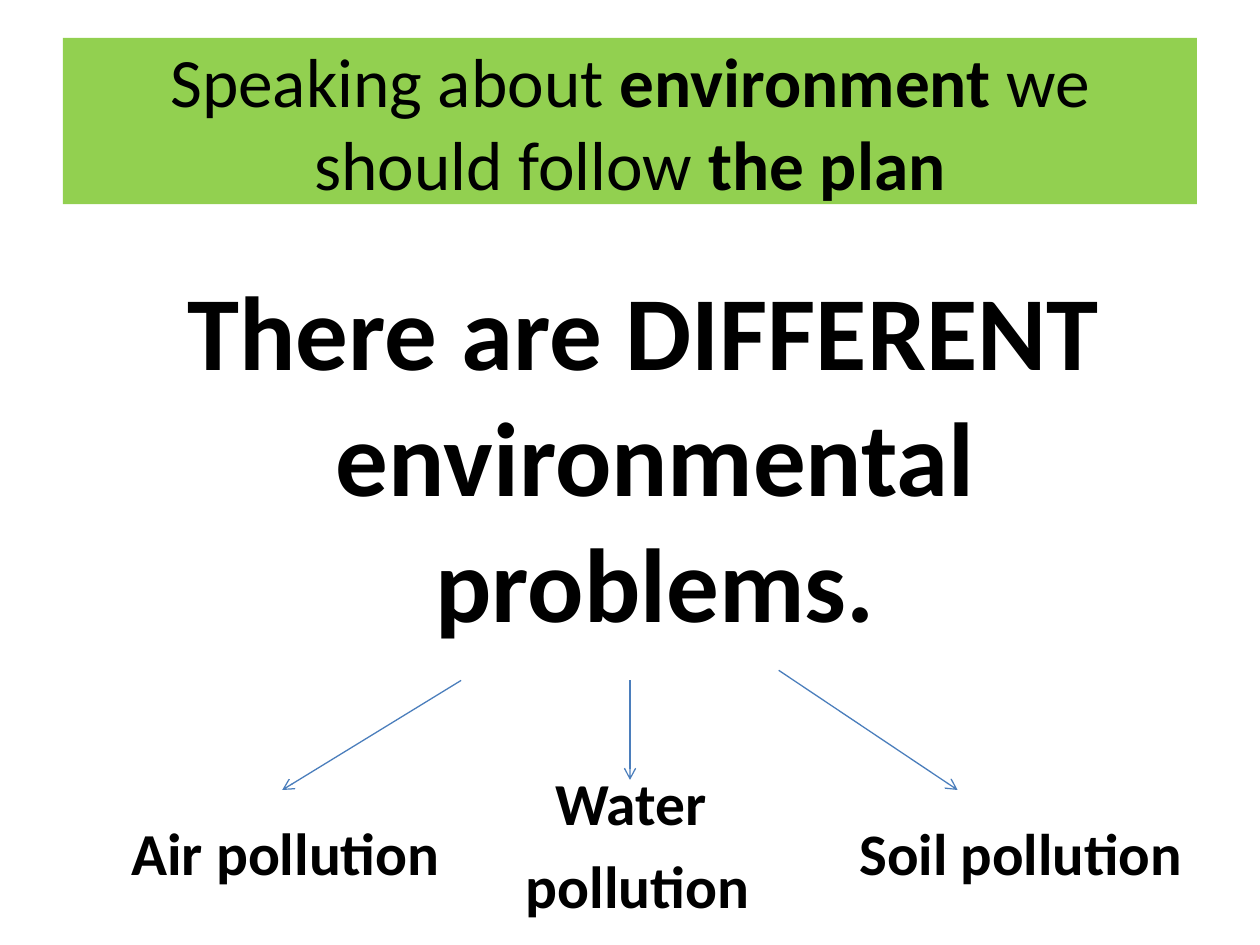
from dataclasses import dataclass
from pptx import Presentation
from pptx.dml.color import RGBColor
from pptx.enum.shapes import MSO_CONNECTOR as CONN, MSO_SHAPE as SHAPE
from pptx.enum.text import MSO_ANCHOR as ANCHOR, PP_ALIGN as ALIGN
from pptx.oxml.xmlchemy import OxmlElement
from pptx.util import Inches, Pt


@dataclass(frozen=True)
class Theme:
    font: str = "Calibri"
    text: str = "000000"
    banner: str = "92D050"
    arrow: str = "4B7EBC"
    title_size: float = 39.6
    body_size: float = 60
    label_size: float = 34
    small_label_size: float = 33.6
    arrow_width: float = 0.75


class SlideBuilder:
    def __init__(self, slide, theme):
        self.s = slide
        self.theme = theme

    def add_runs(self, p, runs, size, align):
        p.alignment = align
        for text, bold in runs:
            r = p.add_run()
            r.text = text
            r.font.name = self.theme.font
            r.font.size = Pt(size)
            r.font.bold = bold
            r.font.color.rgb = RGBColor.from_string(self.theme.text)

    def banner(self, box, runs):
        sp = self.s.shapes.add_shape(SHAPE.RECTANGLE, *map(Inches, box))
        sp.shadow.inherit = False
        sp.fill.solid()
        sp.fill.fore_color.rgb = RGBColor.from_string(self.theme.banner)
        sp.line.fill.background()
        tf = sp.text_frame
        tf.word_wrap = True
        tf.vertical_anchor = ANCHOR.MIDDLE
        self.add_runs(tf.paragraphs[0], runs, self.theme.title_size, ALIGN.CENTER)

    def text(self, box, lines, size, align=ALIGN.CENTER, left=0.1, top=0.05,
             before=0, spacing=None):
        tf = self.s.shapes.add_textbox(*map(Inches, box)).text_frame
        tf.word_wrap = True
        tf.margin_left = Inches(left)
        tf.margin_top = Inches(top)
        for i, line in enumerate(lines):
            p = tf.add_paragraph() if i else tf.paragraphs[0]
            if i:
                p.space_before = Pt(before)
            if spacing:
                p.line_spacing = Pt(spacing)
            self.add_runs(p, [(line, True)], size, align)

    def label(self, box, lines, size, align):
        self.text(box, lines, size, align, before=0.2 * size)

    def arrow(self, start, end):
        c = self.s.shapes.add_connector(CONN.STRAIGHT, *map(Inches, start + end))
        c.line.color.rgb = RGBColor.from_string(self.theme.arrow)
        c.line.width = Pt(self.theme.arrow_width)
        tail = OxmlElement("a:tailEnd")
        tail.set("type", "arrow")
        sp_pr = c._element.spPr
        sp_pr.get_or_add_ln().append(tail)
        sp_pr.append(OxmlElement("a:effectLst"))


def main():
    prs = Presentation()
    prs.slide_width, prs.slide_height = Inches(10), Inches(7.5)
    theme = Theme()
    b = SlideBuilder(prs.slides.add_slide(prs.slide_layouts[6]), theme)

    b.banner((0.5, 0.3, 9, 1.32), [
        ("Speaking about ", False), ("environment", True),
        (" we should follow ", False), ("the plan", True)])
    b.text((0.51, 2.02, 9, 4.57),
           ["There are DIFFERENT ", "environmental problems."],
           theme.body_size, left=0.48, top=0.09, spacing=72)

    for start, end in [((3.66, 5.4), (2.24, 6.27)),
                       ((5, 5.4), (5, 6.19)),
                       ((6.18, 5.32), (7.6, 6.27))]:
        b.arrow(start, end)

    for box, lines, size, align in [
            ((0.83, 6.43, 2.76, 0.79), ["Air pollution"],
             theme.label_size, ALIGN.RIGHT),
            ((3.82, 6.03, 2.48, 1.23), ["Water ", "pollution"],
             theme.label_size, ALIGN.CENTER),
            ((6.57, 6.43, 2.91, 0.79), ["Soil pollution"],
             theme.small_label_size, ALIGN.RIGHT)]:
        b.label(box, lines, size, align)

    prs.save("out.pptx")


if __name__ == "__main__":
    main()
